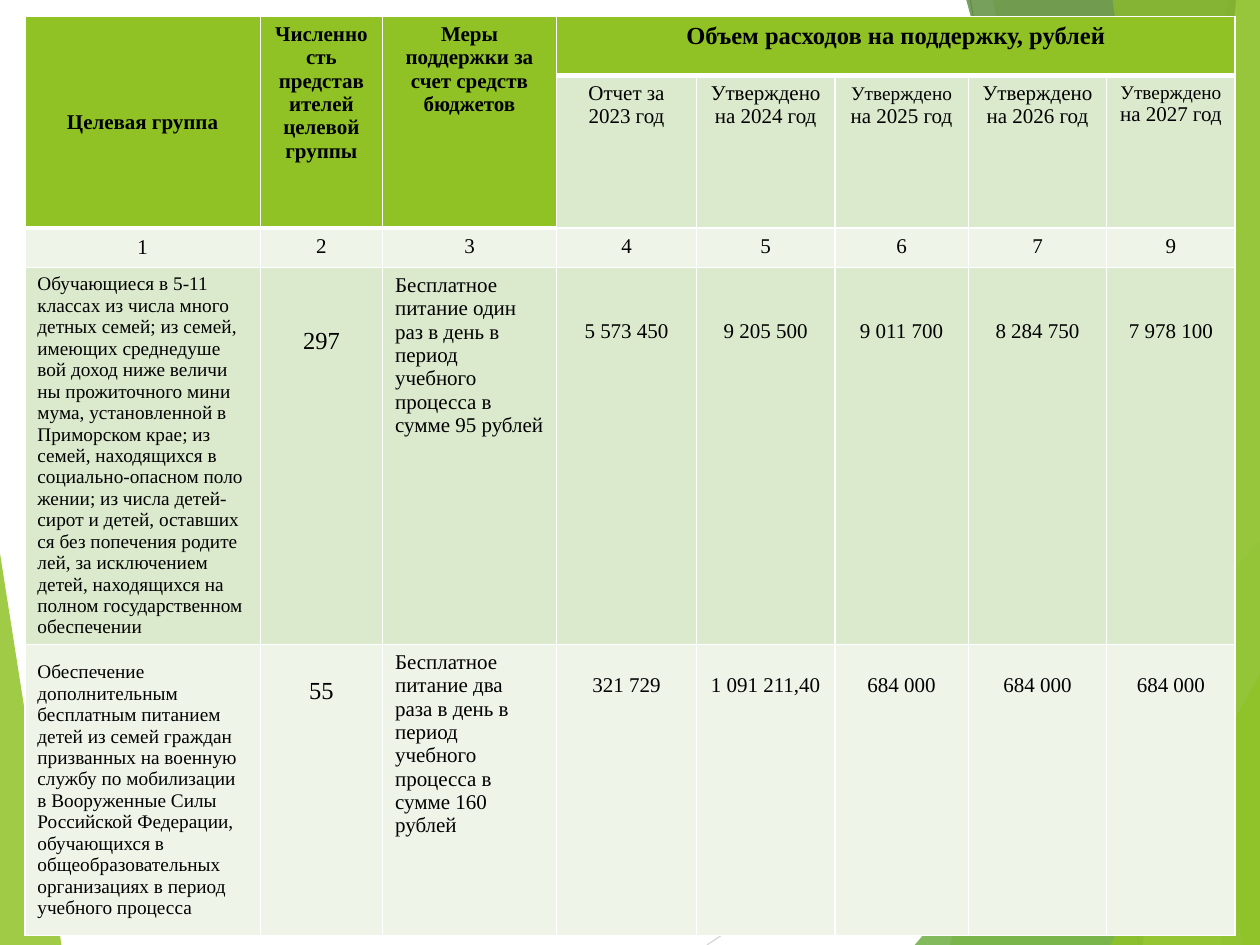
from dataclasses import dataclass

from lxml.etree import SubElement
from pptx import Presentation
from pptx.dml.color import RGBColor
from pptx.enum.shapes import MSO_CONNECTOR as Link
from pptx.enum.text import MSO_ANCHOR as Anchor, PP_ALIGN as Align
from pptx.oxml.ns import qn
from pptx.util import Cm, Pt

WIDE, HIGH = 25.4, 19.05
FONT = "Times New Roman"
LIME, PALE, MIST = "90C226", "DBE9CD", "EEF4E8"


@dataclass
class Pane:
    points: list[tuple[float, float]]
    color: str
    alpha: int


@dataclass
class Ray:
    start: tuple[float, float]
    end: tuple[float, float]
    color: str


def strip(top: float, foot: float, color: str, alpha: int) -> Pane:
    """Pane from a slanted left side to the right edge of the slide."""
    return Pane([(top, 0), (foot, HIGH), (WIDE, HIGH), (WIDE, 0)], color, alpha)


def wedge(foot: float, rise: float, color: str, alpha: int) -> Pane:
    """Triangle in the bottom right corner of the slide."""
    return Pane([(foot, HIGH), (WIDE, rise), (WIDE, HIGH)], color, alpha)


RAYS = [
    Ray((14.25, HIGH), (WIDE, 11.61), "D9D9D9"),
    Ray((19.56, 0), (22.96, HIGH), "BFBFBF"),
]
LEFT = Pane([(0, 11.15), (1.24, HIGH), (0, HIGH)], LIME, 85)
PANES = [
    strip(24.77, 19.15, LIME, 30),
    strip(20.02, 23.34, LIME, 20),
    wedge(18.44, 10.9, "54A021", 72),
    strip(19.48, 24.64, "3F7819", 70),
    strip(24.92, 23.04, "C0E474", 70),
    strip(22.43, 25.04, LIME, 65),
    wedge(22.38, 13.59, LIME, 80),
]

COLS = [4.75, 2.46, 3.51, 2.82, 2.79, 2.69, 2.79, 2.59]
ROWS = [1.19, 3.07, 0.79, 7.6, 5.87]
FILLS = [LIME, PALE, MIST, PALE, MIST]
HEADS = [
    "Целевая группа",
    "Численность представителей целевой группы",
    "Меры поддержки за счет средств бюджетов",
]
YEARS = [
    [("Отчет за 2023 год", 12)],
    [("Утверждено на 2024 год", 12)],
    [("Утверждено", 11), (" на 2025 год", 12)],
    [("Утверждено на 2026 год", 12)],
    [("Утверждено ", 11), ("на 2027 год", 12)],
]


@dataclass
class Group:
    name: str
    count: str
    aid: str
    sums: list[str]
    skip: int  # lines left free above the figures


GROUPS = [
    Group(
        "Обучающиеся в 5-11 классах из числа много детных семей; из семей, "
        "имеющих среднедуше вой доход ниже величи ны прожиточного мини мума, "
        "установленной в Приморском крае; из семей, находящихся в "
        "социально-опасном поло жении; из числа детей-сирот и детей, "
        "оставших ся без попечения родите лей, за исключением детей, "
        "находящихся на полном государственном обеспечении",
        "297",
        "Бесплатное питание один раз в день в период учебного процесса "
        "в сумме 95 рублей",
        ["5 573 450", "9 205 500", "9 011 700", "8 284 750", "7 978 100"],
        2,
    ),
    Group(
        "Обеспечение дополнительным бесплатным питанием детей из семей граждан "
        "призванных на военную службу по мобилизации в Вооруженные Силы "
        "Российской Федерации, обучающихся в общеобразовательных организациях "
        "в период учебного процесса",
        "55",
        "Бесплатное питание два раза в день в период учебного процесса "
        "в сумме 160 рублей",
        ["321 729", "1 091 211,40", "684 000", "684 000", "684 000"],
        1,
    ),
]


def rgb(color: str) -> RGBColor:
    return RGBColor.from_string(color)


def draw_pane(slide, pane: Pane) -> None:
    first, *rest = [(Cm(x), Cm(y)) for x, y in pane.points]
    pen = slide.shapes.build_freeform(*first, scale=1.0)
    pen.add_line_segments(rest, close=True)
    shape = pen.convert_to_shape()
    shape.shadow.inherit = False
    shape.line.fill.background()
    shape.fill.solid()
    shape.fill.fore_color.rgb = rgb(pane.color)
    tint = next(shape._element.spPr.iter(qn("a:srgbClr")))
    SubElement(tint, qn("a:alpha"), val=str(pane.alpha * 1000))


def draw_ray(slide, ray: Ray) -> None:
    ends = [Cm(v) for v in (*ray.start, *ray.end)]
    line = slide.shapes.add_connector(Link.STRAIGHT, *ends)
    line.line.color.rgb = rgb(ray.color)
    line.line.width = Pt(0.75)
    SubElement(line._element.spPr, qn("a:effectLst"))


def style(cell, fill: str, foot: float = 1) -> None:
    """Give a cell its white borders and its fill."""
    props = cell._tc.get_or_add_tcPr()
    for side, width in zip("LRTB", (1, 1, 1, foot)):
        edge = SubElement(props, qn(f"a:ln{side}"), w=str(Pt(width)))
        paint = SubElement(edge, qn("a:solidFill"))
        SubElement(paint, qn("a:srgbClr"), val="FFFFFF")
    cell.fill.solid()
    cell.fill.fore_color.rgb = rgb(fill)


def write(cell, text, *, size=12, bold=False, align=Align.CENTER,
          anchor=Anchor.TOP, skip=0) -> None:
    """Write a string, or a list of (string, size) parts, into a cell."""
    parts = [(text, size)] if isinstance(text, str) else text
    cell.vertical_anchor = anchor
    cell.margin_top = Cm(0.13 + skip * size * 0.039)
    para = cell.text_frame.paragraphs[0]
    para.alignment = align
    for words, points in parts:
        run = para.add_run()
        run.text = words
        run.font.name = FONT
        run.font.size = Pt(points)
        run.font.bold = bold
        run.font.color.rgb = rgb("000000")


def draw_table(slide) -> None:
    frame = slide.shapes.add_table(len(ROWS), len(COLS), Cm(0.5), Cm(0.33),
                                   Cm(sum(COLS)), Cm(sum(ROWS)))
    table = frame.table
    table.first_row = table.horz_banding = False
    for col, width in zip(table.columns, COLS):
        col.width = Cm(width)
    for row, height in zip(table.rows, ROWS):
        row.height = Cm(height)

    for r, fill in enumerate(FILLS):
        for c in range(len(COLS)):
            head = r == 0 or (r == 1 and c < len(HEADS))
            style(table.cell(r, c), LIME if head else fill, 3 if head else 1)

    for c, text in enumerate(HEADS):
        cell = table.cell(0, c)
        cell.merge(table.cell(1, c))
        write(cell, text, bold=True, anchor=Anchor.TOP if c else Anchor.MIDDLE)
    total = table.cell(0, len(HEADS))
    total.merge(table.cell(0, len(COLS) - 1))
    write(total, "Объем расходов на поддержку, рублей", size=14, bold=True)
    for c, parts in enumerate(YEARS, len(HEADS)):
        write(table.cell(1, c), parts)
    for c, mark in enumerate("12345679"):
        write(table.cell(2, c), mark, anchor=Anchor.TOP if c else Anchor.MIDDLE)

    for r, group in enumerate(GROUPS, 3):
        write(table.cell(r, 0), group.name, size=11, align=Align.LEFT,
              anchor=Anchor.MIDDLE)
        write(table.cell(r, 1), group.count, size=14, skip=group.skip)
        write(table.cell(r, 2), group.aid, align=Align.LEFT)
        for c, value in enumerate(group.sums, len(HEADS)):
            write(table.cell(r, c), value, skip=group.skip)


def main() -> None:
    deck = Presentation()
    deck.slide_width, deck.slide_height = Cm(WIDE), Cm(HIGH)
    slide = deck.slides.add_slide(deck.slide_layouts[6])
    draw_pane(slide, LEFT)
    for ray in RAYS:
        draw_ray(slide, ray)
    for pane in PANES:
        draw_pane(slide, pane)
    draw_table(slide)
    deck.save("out.pptx")


if __name__ == "__main__":
    main()
